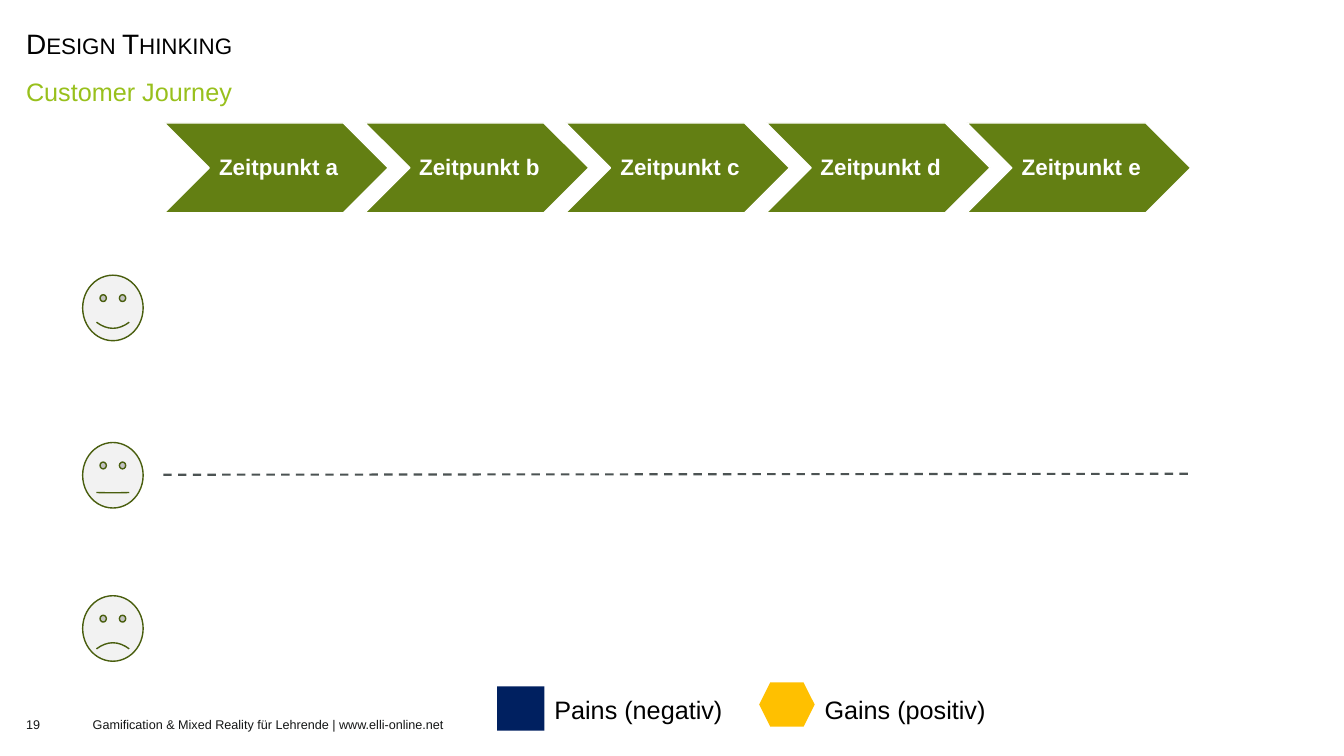
import pptx
import pptx.dml.color
import pptx.enum.dml
import pptx.enum.shapes
import pptx.enum.text
import pptx.oxml
import pptx.oxml.ns
import pptx.util

Inches = pptx.util.Inches
Pt = pptx.util.Pt
SHAPE = pptx.enum.shapes.MSO_SHAPE
ALIGN = pptx.enum.text.PP_ALIGN
ANCHOR = pptx.enum.text.MSO_ANCHOR
DEFAULT_INSETS = (0.1, 0.05, 0.1, 0.05)
NO_INSETS = (0, 0, 0, 0)


def rgb(color):
    """Turn a hex string into a colour."""
    return pptx.dml.color.RGBColor.from_string(color)


def add_text(s, box, text, size, color, bold=False, align=ALIGN.LEFT,
             anchor=ANCHOR.TOP, insets=DEFAULT_INSETS, spacing=1.0):
    """Add a one-line text box and return its run."""
    tf = s.shapes.add_textbox(*map(Inches, box)).text_frame
    tf.word_wrap = True
    tf.vertical_anchor = anchor
    tf.margin_left, tf.margin_top, tf.margin_right, tf.margin_bottom = map(Inches, insets)
    p = tf.paragraphs[0]
    p.alignment = align
    p.line_spacing = spacing
    r = p.add_run()
    r.text = text
    r.font.name = "Arial"
    r.font.size = Pt(size)
    r.font.bold = bold
    r.font.color.rgb = rgb(color)
    return r


def add_shape(s, kind, box, fill, line=None):
    """Add a filled preset shape with an optional thin outline."""
    sp = s.shapes.add_shape(kind, *map(Inches, box))
    sp.shadow.inherit = False
    sp.fill.solid()
    sp.fill.fore_color.rgb = rgb(fill)
    if line:
        sp.line.color.rgb = rgb(line)
        sp.line.width = Pt(1)
    else:
        sp.line.fill.background()
    return sp


def add_heading(s, x, y, w):
    """Add the small-caps title and the subtitle below it."""
    r = add_text(s, (x, y, w, 0.39), "Design Thinking", 20, "000000",
                 anchor=ANCHOR.MIDDLE, spacing=1.1)
    r.font._element.set("cap", "small")
    add_text(s, (x, y + 0.46, w, 0.39), "Customer Journey", 18, "98C01C", spacing=1.1)


def add_timeline(s, x, y, w, h):
    """Add a row of overlapping chevrons, one for each point in time."""
    step = 1.99
    letters = "abcde"
    chevron_w = w - step * (len(letters) - 1)
    for i, letter in enumerate(letters):
        left = x + i * step
        add_shape(s, SHAPE.CHEVRON, (left, y, chevron_w, h), "637F13", "FFFFFF")
        add_text(s, (left + h / 2, y, chevron_w - h, h), f"Zeitpunkt {letter}", 16, "FFFFFF",
                 bold=True, align=ALIGN.CENTER, anchor=ANCHOR.MIDDLE,
                 insets=(0.07, 0.02, 0.02, 0.02), spacing=0.9)


def add_mood_scale(s, x, y, w):
    """Add the happy, neutral and sad faces and the dashed neutral line."""
    for dy, smile in ((0, 0.047), (1.66, 0.002), (3.18, -0.047)):
        face = add_shape(s, SHAPE.SMILEY_FACE, (x, y + dy, 0.6, 0.65), "F2F2F2", "495E0E")
        face.adjustments[0] = smile
    line = s.shapes.add_connector(
        pptx.enum.shapes.MSO_CONNECTOR.STRAIGHT,
        *map(Inches, (x + 0.8, y + 1.98, x + w, y + 1.97)))
    line.line.color.rgb = rgb("4C5353")
    line.line.width = Pt(1.5)
    line.line.dash_style = pptx.enum.dml.MSO_LINE.DASH
    line._element.spPr.append(pptx.oxml.parse_xml(
        f"<a:effectLst {pptx.oxml.ns.nsdecls('a')}/>"))


def add_legend(s, x, y):
    """Add the keys for pains and gains."""
    keys = (
        (SHAPE.RECTANGLE, 0, 0.04, 0.47, "002060", "Pains (negativ)"),
        (SHAPE.HEXAGON, 2.6, 0, 0.55, "FFC000", "Gains (positiv)"),
    )
    for kind, dx, dy, w, fill, label in keys:
        add_shape(s, kind, (x + dx, y + dy, w, 0.44), fill)
        add_text(s, (x + dx + w, y + 0.07, 2.2, 0.4), label, 18, "000000")


def add_footer(s, x, y, h):
    """Add the slide number and the footer text."""
    parts = (
        (0, 0.5, "19"),
        (0.66, 7.56, "Gamification & Mixed Reality für Lehrende | www.elli-online.net"),
    )
    for dx, w, text in parts:
        add_text(s, (x + dx, y, w, h), text, 9, "141616",
                 anchor=ANCHOR.MIDDLE, insets=NO_INSETS)


def main():
    """Build the customer journey slide and save it."""
    prs = pptx.Presentation()
    prs.slide_width = Inches(13.33)
    prs.slide_height = Inches(7.5)
    s = prs.slides.add_slide(prs.slide_layouts[6])
    add_footer(s, 0.26, 7, 0.37)
    add_heading(s, 0.16, 0.22, 13.02)
    add_timeline(s, 1.63, 1.22, 10.18, 0.89)
    add_mood_scale(s, 0.82, 2.73, 11)
    add_legend(s, 4.93, 6.77)
    prs.save("out.pptx")


if __name__ == "__main__":
    main()
